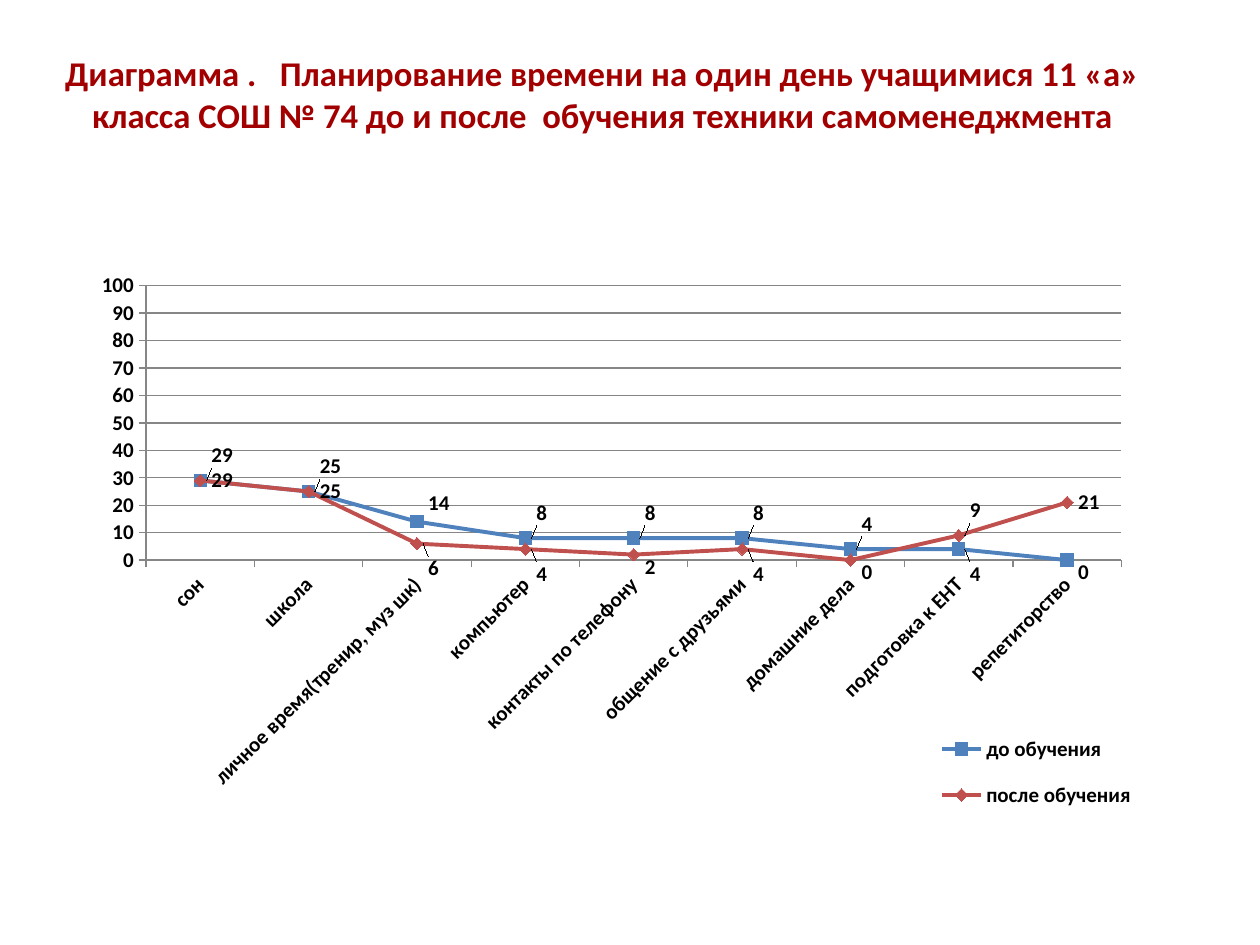
from lxml.etree import SubElement
from pptx import Presentation
from pptx.chart.data import CategoryChartData
from pptx.dml.color import RGBColor
from pptx.enum.chart import (XL_CHART_TYPE, XL_LABEL_POSITION, XL_LEGEND_POSITION,
                             XL_MARKER_STYLE, XL_TICK_MARK)
from pptx.enum.text import MSO_ANCHOR, PP_ALIGN
from pptx.oxml.ns import qn
from pptx.util import Inches, Pt

COLORS = {"title": "A20000", "text": "000000", "axis": "868686",
          "before": "4F81BD", "after": "C0504D"}
ACTIVITIES = ["сон", "школа", "личное время(тренир, муз шк)", "компьютер",
              "контакты по телефону", "общение с друзьями", "домашние дела",
              "подготовка к ЕНТ", "репетиторство"]
# Label shifts: point index -> vertical move as a share of chart height
SERIES = [
    {"name": "до обучения", "values": [29, 25, 14, 8, 8, 8, 4, 4, 0],
     "color": "before", "marker": XL_MARKER_STYLE.SQUARE,
     "shifts": {0: -0.04, 1: -0.04, 2: -0.03, 3: -0.04, 4: -0.04,
                5: -0.04, 6: -0.04, 7: 0.04, 8: 0.02}},
    {"name": "после обучения", "values": [29, 25, 6, 4, 2, 4, 0, 9, 21],
     "color": "after", "marker": XL_MARKER_STYLE.DIAMOND,
     "shifts": {2: 0.04, 3: 0.04, 4: 0.02, 5: 0.04, 6: 0.02, 7: -0.04}},
]


def rgb(name):
    return RGBColor.from_string(COLORS[name])


def set_layout(parent, after_tag, values):
    """Place a chart part by hand; the layout follows the given child."""
    for old in parent.findall(qn("c:layout")):
        parent.remove(old)
    layout = SubElement(parent, qn("c:layout"))
    manual = SubElement(layout, qn("c:manualLayout"))
    for tag, value in values.items():
        SubElement(manual, qn(f"c:{tag}")).set("val", str(value))
    if after_tag:
        parent.find(qn(after_tag)).addnext(layout)
    else:
        parent.insert(0, layout)


prs = Presentation()
prs.slide_width, prs.slide_height = Inches(10), Inches(7.5)
slide = prs.slides.add_slide(prs.slide_layouts[5])

# Title
title = slide.shapes.title
title.left, title.top, title.width, title.height = (
    Inches(n) for n in (0.28, 0.52, 9, 0.87))
frame = title.text_frame
frame.text = ("Диаграмма .   Планирование времени на один день учащимися 11 «а» "
              "класса СОШ № 74 до и после  обучения техники самоменеджмента")
frame.word_wrap = True
frame.vertical_anchor = MSO_ANCHOR.MIDDLE
frame.margin_top, frame.margin_bottom = Inches(0), Inches(0.42)
heading = frame.paragraphs[0]
heading.alignment = PP_ALIGN.CENTER
heading_font = heading.runs[0].font
for key, value in {"name": "Calibri", "size": Pt(19.8), "bold": True}.items():
    setattr(heading_font, key, value)
heading_font.color.rgb = rgb("title")

# Chart
time_data = CategoryChartData()
time_data.categories = ACTIVITIES
for entry in SERIES:
    time_data.add_series(entry["name"], entry["values"])
chart = slide.shapes.add_chart(
    XL_CHART_TYPE.LINE_MARKERS, Inches(0.35), Inches(2.02),
    Inches(9), Inches(4.95), time_data).chart
chart.has_title = False
for key, value in {"name": "Calibri", "size": Pt(12), "bold": True}.items():
    setattr(chart.font, key, value)
chart.font.color.rgb = rgb("text")
chart.plots[0].vary_by_categories = False
set_layout(chart.plots[0]._element.getparent(), None, {
    "layoutTarget": "inner", "xMode": "edge", "yMode": "edge",
    "x": 0.09, "y": 0.05, "w": 0.86, "h": 0.44})

# Axes
percent_axis, activity_axis = chart.value_axis, chart.category_axis
for key, value in {"minimum_scale": 0, "maximum_scale": 100, "major_unit": 10,
                   "has_major_gridlines": True}.items():
    setattr(percent_axis, key, value)
for axis in (percent_axis, activity_axis):
    axis.major_tick_mark = XL_TICK_MARK.OUTSIDE
    axis.format.line.color.rgb = rgb("axis")
    axis.format.line.width = Pt(0.75)
    axis.tick_labels.font.size = Pt(12)
    axis.tick_labels.font.bold = True
grid_line = percent_axis.major_gridlines.format.line
grid_line.color.rgb = rgb("axis")
grid_line.width = Pt(0.75)
activity_axis._element.find(qn("c:txPr")).find(qn("a:bodyPr")).set("rot", "-2700000")

# Lines, markers and value labels
for series, entry in zip(chart.plots[0].series, SERIES):
    color = rgb(entry["color"])
    series.smooth = False
    series.format.line.color.rgb = color
    series.format.line.width = Pt(2.25)
    series.marker.style = entry["marker"]
    series.marker.size = 7
    series.marker.format.fill.solid()
    series.marker.format.fill.fore_color.rgb = color
    series.marker.format.line.color.rgb = color
    series.data_labels.show_value = True
    series.data_labels.position = XL_LABEL_POSITION.RIGHT
    for index in entry["shifts"]:
        series.points[index].data_label.position = XL_LABEL_POSITION.RIGHT
    for label in series._element.iter(qn("c:dLbl")):
        index = int(label.find(qn("c:idx")).get("val"))
        set_layout(label, "c:idx", {"x": 0, "y": entry["shifts"][index]})

# Legend
chart.has_legend = True
chart.legend.position = XL_LEGEND_POSITION.RIGHT
chart.legend.include_in_layout = False
set_layout(chart.legend._element, "c:legendPos", {
    "xMode": "edge", "yMode": "edge", "x": 0.78, "y": 0.74, "w": 0.19, "h": 0.18})

prs.save("out.pptx")
